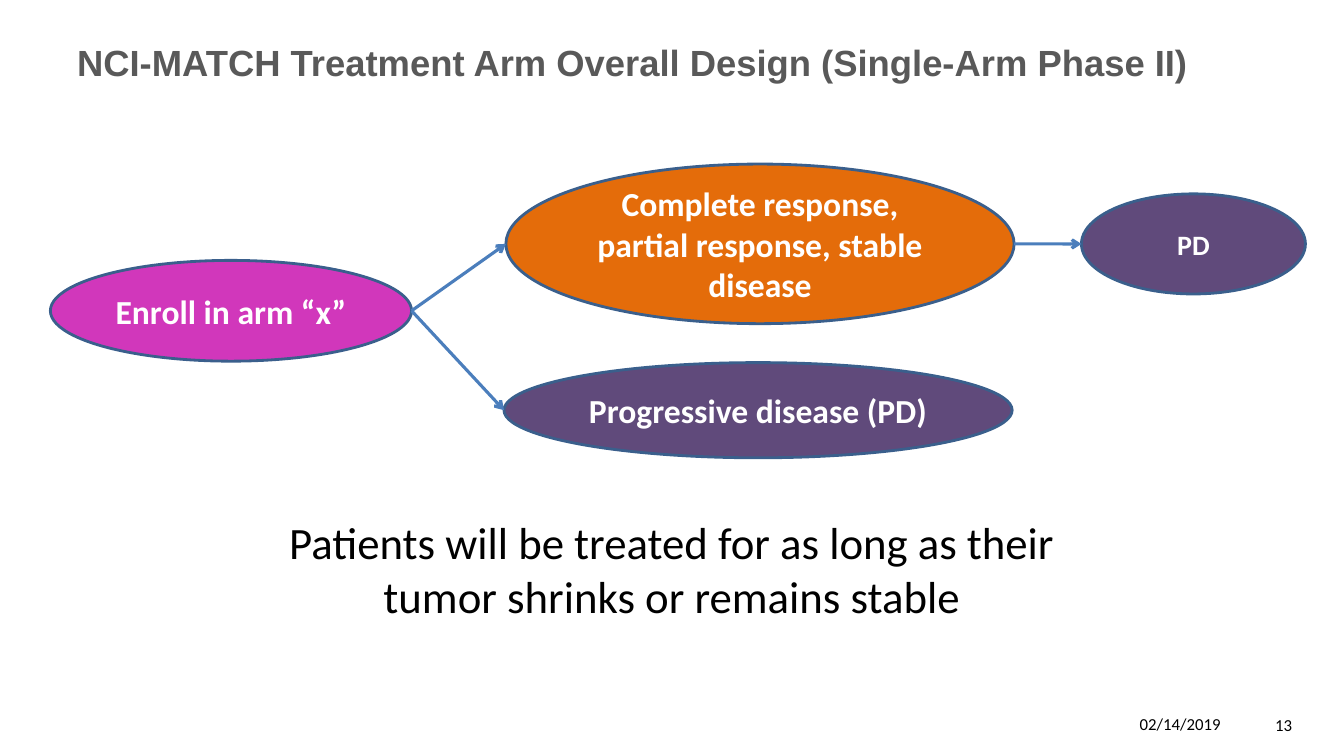
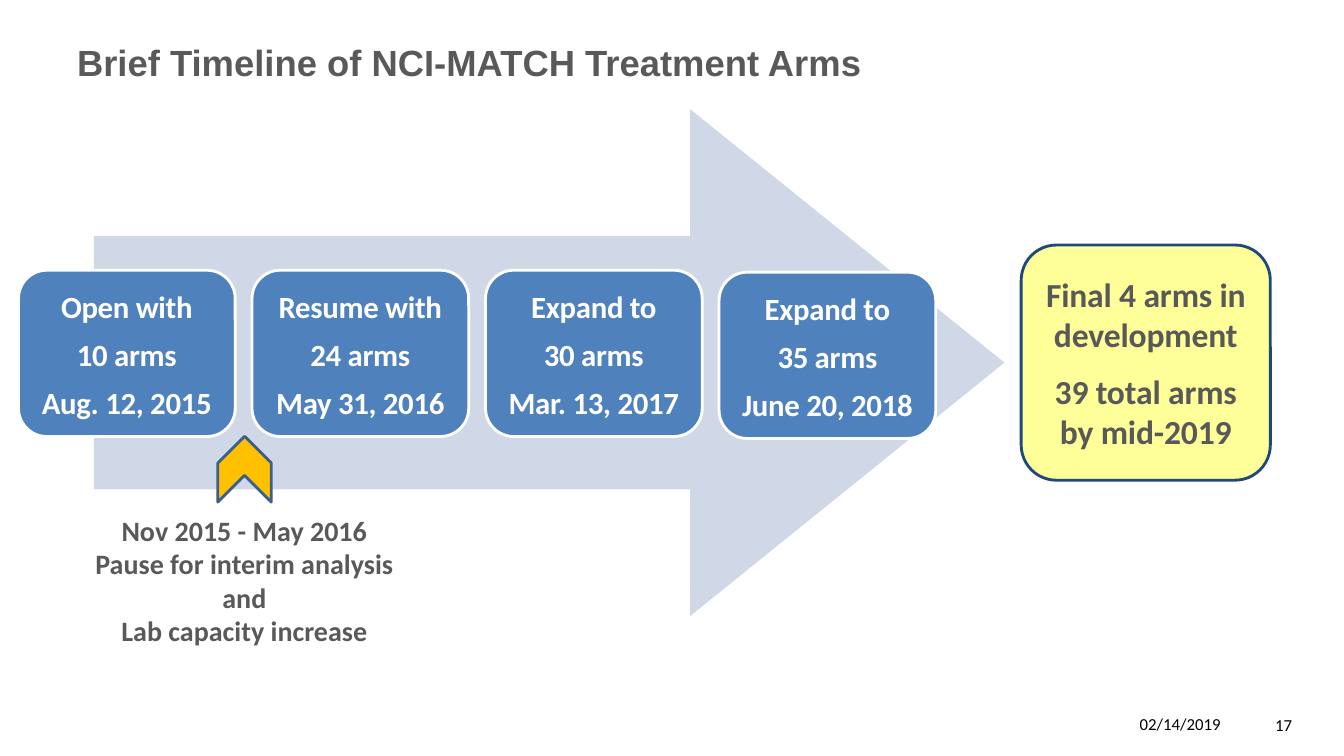
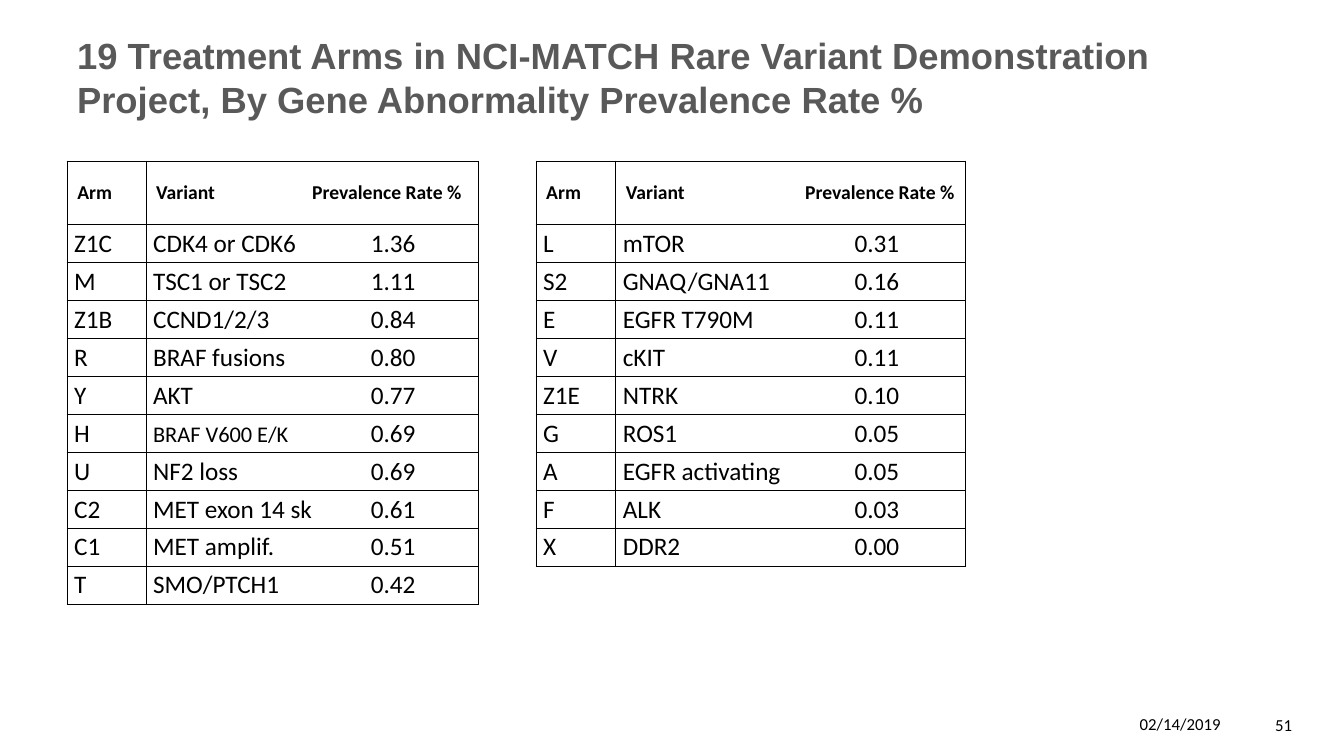
import pptx
import pptx.chart.data
import pptx.dml.color
import pptx.enum.shapes
import pptx.enum.text
import pptx.oxml
import pptx.oxml.ns
import pptx.util

Pt = pptx.util.Pt
RGB = pptx.dml.color.RGBColor
Shape = pptx.enum.shapes.MSO_SHAPE
Align = pptx.enum.text.PP_ALIGN
Anchor = pptx.enum.text.MSO_ANCHOR

BLACK = RGB(0x00, 0x00, 0x00)
WHITE = RGB(0xFF, 0xFF, 0xFF)
GREY = RGB(0x59, 0x59, 0x59)
PINK = RGB(0xD1, 0x37, 0xBB)
ORANGE = RGB(0xE4, 0x6C, 0x0A)
PURPLE = RGB(0x60, 0x4A, 0x7B)
EDGE = RGB(0x3A, 0x5F, 0x8C)
LINK = RGB(0x4B, 0x7E, 0xBC)
PALE = RGB(0xD0, 0xD8, 0xE8)
BLUE = RGB(0x4F, 0x81, 0xBD)
NAVY = RGB(0x1F, 0x49, 0x7D)
YELLOW = RGB(0xFF, 0xFF, 0x99)
GOLD = RGB(0xFF, 0xC0, 0x00)

DATE = "02/14/2019"
NO_STYLE = "{2D5ABB26-0587-4C30-8999-92F81FD0307C}"
SMALL = {"BRAF V600 E/K": 16}

LEFT_ARMS = [
    ("Z1C", "CDK4 or CDK6", "1.36"),
    ("M", "TSC1 or TSC2", "1.11"),
    ("Z1B", "CCND1/2/3", "0.84"),
    ("R", "BRAF fusions", "0.80"),
    ("Y", "AKT", "0.77"),
    ("H", "BRAF V600 E/K", "0.69"),
    ("U", "NF2 loss", "0.69"),
    ("C2", "MET exon 14 sk", "0.61"),
    ("C1", "MET amplif.", "0.51"),
    ("T", "SMO/PTCH1", "0.42"),
]
RIGHT_ARMS = [
    ("L", "mTOR", "0.31"),
    ("S2", "GNAQ/GNA11", "0.16"),
    ("E", "EGFR T790M", "0.11"),
    ("V", "cKIT", "0.11"),
    ("Z1E", "NTRK", "0.10"),
    ("G", "ROS1", "0.05"),
    ("A", "EGFR activating", "0.05"),
    ("F", "ALK", "0.03"),
    ("X", "DDR2", "0.00"),
]
HEAD = ("Arm", "Variant", "Prevalence Rate %")


def add_xml(parent, tag, **attrs):
    child = pptx.oxml.ns.qn(tag)
    node = parent.makeelement(child, attrs)
    parent.append(node)
    return node


def style(run, size, color, bold=False, font="Calibri"):
    run.font.name = font
    run.font.size = Pt(size)
    run.font.bold = bold
    run.font.color.rgb = color


def write(frame, text, size, color, bold=False, font="Calibri",
          align=Align.CENTER, anchor=Anchor.MIDDLE, inset=None, track=0):
    """Fill a frame, one paragraph per line; track is in hundredths of a point."""
    frame.word_wrap = True
    frame.vertical_anchor = anchor
    if inset is not None:
        frame.margin_left = frame.margin_right = Pt(inset)
        frame.margin_top = frame.margin_bottom = Pt(inset)
    frame.text = text
    for para in frame.paragraphs:
        para.alignment = align
        for run in para.runs:
            style(run, size, color, bold, font)
            if track:
                run._r.get_or_add_rPr().set("spc", str(track))


def add_text(slide, box, text, size, color, **look):
    area = slide.shapes.add_textbox(*map(Pt, box))
    write(area.text_frame, text, size, color, **look)


def add_form(slide, kind, box, fill, edge=None, width=2, adjust=()):
    form = slide.shapes.add_shape(kind, *map(Pt, box))
    form.shadow.inherit = False
    form.fill.solid()
    form.fill.fore_color.rgb = fill
    if edge is None:
        form.line.fill.background()
    else:
        form.line.color.rgb = edge
        form.line.width = Pt(width)
    for index, value in enumerate(adjust):
        form.adjustments[index] = value
    return form


def add_oval(slide, box, fill, text, size=24):
    oval = add_form(slide, Shape.OVAL, box, fill, EDGE)
    write(oval.text_frame, text, size, WHITE, bold=True)
    return oval


def join(slide, start, end):
    """Draw an arrow from the right of one shape to the left of another."""
    line = slide.shapes.add_connector(
        pptx.enum.shapes.MSO_CONNECTOR.STRAIGHT,
        start.left + start.width, start.top + start.height // 2,
        end.left, end.top + end.height // 2)
    line.line.color.rgb = LINK
    line.line.width = Pt(2.25)
    add_xml(line.line._get_or_add_ln(), "a:tailEnd", type="arrow")
    add_xml(line._element.spPr, "a:effectLst")


def add_slide(deck, title, number, top=21.6):
    slide = deck.slides.add_slide(deck.slide_layouts[6])
    add_text(slide, (48, top, 864, 44.6), title, 26, GREY, bold=True,
             font="Arial", align=Align.LEFT)
    add_text(slide, (720, 502.5, 159, 29), DATE, 12, BLACK, align=Align.RIGHT)
    add_text(slide, (882, 502, 48, 31), number, 12, BLACK, align=Align.RIGHT)
    return slide


def draw_design(deck):
    slide = add_slide(
        deck, "NCI-MATCH Treatment Arm Overall Design (Single-Arm Phase II)", "13")
    enroll = add_oval(slide, (36, 186, 258, 72), PINK, "Enroll in arm “x”")
    stable = add_oval(slide, (361.4, 117.2, 363, 114), ORANGE,
                      "Complete response, partial response, stable disease")
    worse = add_oval(slide, (360, 259, 363, 68), PURPLE, "Progressive disease (PD)")
    later = add_oval(slide, (772.5, 138.5, 160, 71.5), PURPLE, "PD", 20)
    for start, end in ((enroll, worse), (enroll, stable), (stable, later)):
        join(slide, start, end)
    add_text(slide, (159, 364.3, 642, 85),
             "Patients will be treated for as long as their tumor shrinks "
             "or remains stable", 32, BLACK, anchor=Anchor.TOP)


def draw_timeline(deck):
    slide = add_slide(deck, "Brief Timeline of NCI-MATCH Treatment Arms", "17")
    add_form(slide, Shape.RIGHT_ARROW, (67, 78, 650.5, 362), PALE,
             adjust=(0.5, 0.62))
    steps = [
        ("Open with\n10 arms\nAug. 12, 2015", 193),
        ("Resume with\n24 arms\nMay 31, 2016", 193),
        ("Expand to\n30 arms\nMar. 13, 2017", 193),
        ("Expand to\n35 arms\nJune 20, 2018", 194.4),
    ]
    for index, (text, top) in enumerate(steps):
        step = add_form(slide, Shape.ROUNDED_RECTANGLE,
                        (13.2 + 166.8 * index, top, 154.8, 118.8),
                        BLUE, WHITE, 2.04, (0.17,))
        write(step.text_frame, text, 22, WHITE, bold=True, inset=0, track=-20)
        first, *rest = step.text_frame.paragraphs
        first.line_spacing = Pt(27.6)
        for para in rest:
            para.space_before = Pt(7.8)
    final = add_form(slide, Shape.ROUNDED_RECTANGLE, (729.4, 175, 178, 168),
                     YELLOW, NAVY, 2.04, (0.15,))
    write(final.text_frame,
          "Final 4 arms in development\n39 total arms\nby mid-2019",
          24, GREY, bold=True, inset=0, track=-10)
    final.text_frame.paragraphs[0].space_after = Pt(12)
    mark = add_form(slide, Shape.CHEVRON, (151.2, 316, 47, 38.2), GOLD, EDGE)
    mark.rotation = 270
    add_text(slide, (37.4, 366.5, 274.3, 97.2),
             "Nov 2015 - May 2016\nPause for interim analysis\nand\n"
             "Lab capacity increase", 20, GREY, bold=True,
             anchor=Anchor.TOP, inset=0)


def set_edges(cell, sides):
    props = cell._tc.get_or_add_tcPr()
    for side in "LRTB":
        if side in sides:
            line = add_xml(props, "a:ln" + side, w=str(Pt(1)))
            paint = add_xml(line, "a:solidFill")
            add_xml(paint, "a:srgbClr", val=str(BLACK))
        else:
            line = add_xml(props, "a:ln" + side, w="0")
            add_xml(line, "a:noFill")
    cell.fill.background()


def fill_cell(cell, head, text, rate=None, stop=0):
    """Write a cell; a rate follows its variant at a tab stop."""
    size = 14 if head else 18
    para = cell.text_frame.paragraphs[0]
    para.text = text
    if rate:
        tabs = add_xml(para._p.get_or_add_pPr(), "a:tabLst")
        add_xml(tabs, "a:tab", pos=str(Pt(stop)), algn="l")
        para.add_run().text = "\t" + rate
    for run in para.runs:
        style(run, SMALL.get(run.text, size), BLACK, bold=head)


def draw_table(deck):
    slide = add_slide(
        deck, "19 Treatment Arms in NCI-MATCH Rare Variant Demonstration "
        "Project, By Gene Abnormality Prevalence Rate %", "51", 32.5)
    widths = (56.4, 237.4, 41.2, 57, 250)
    count = len(LEFT_ARMS) + 1
    frame = slide.shapes.add_table(count, len(widths), Pt(48), Pt(115.2),
                                   Pt(sum(widths)), Pt(45.4 + 27.1 * (count - 1)))
    table = frame.table
    table.first_row = table.horz_banding = False
    table._tbl.tblPr.find(pptx.oxml.ns.qn("a:tableStyleId")).text = NO_STYLE
    for column, width in zip(table.columns, widths):
        column.width = Pt(width)
    for index, row in enumerate(table.rows):
        head = index == 0
        row.height = Pt(45.4 if head else 27.1)
        for cell in row.cells:
            cell.vertical_anchor = Anchor.MIDDLE
            if not head:
                cell.margin_left = cell.margin_right = Pt(5)
                cell.margin_top = cell.margin_bottom = 0
        # Each half: first column, its rows, tab stops for head and body
        for start, arms, stops in ((0, LEFT_ARMS, (111.4, 155.5)),
                                   (3, RIGHT_ARMS, (128, 165.5))):
            pair = row.cells[start], row.cells[start + 1]
            full = index <= len(arms)
            if full:
                arm, name, rate = HEAD if head else arms[index - 1]
                fill_cell(pair[0], head, arm)
                fill_cell(pair[1], head, name, rate, stops[0 if head else 1])
            for cell in pair:
                set_edges(cell, "LRTB" if full else "T")
        set_edges(row.cells[2], "LR" if index <= len(RIGHT_ARMS) else "L")


def main():
    deck = pptx.Presentation()
    deck.slide_width, deck.slide_height = Pt(960), Pt(540)
    draw_design(deck)
    draw_timeline(deck)
    draw_table(deck)
    deck.save("out.pptx")


if __name__ == "__main__":
    main()
